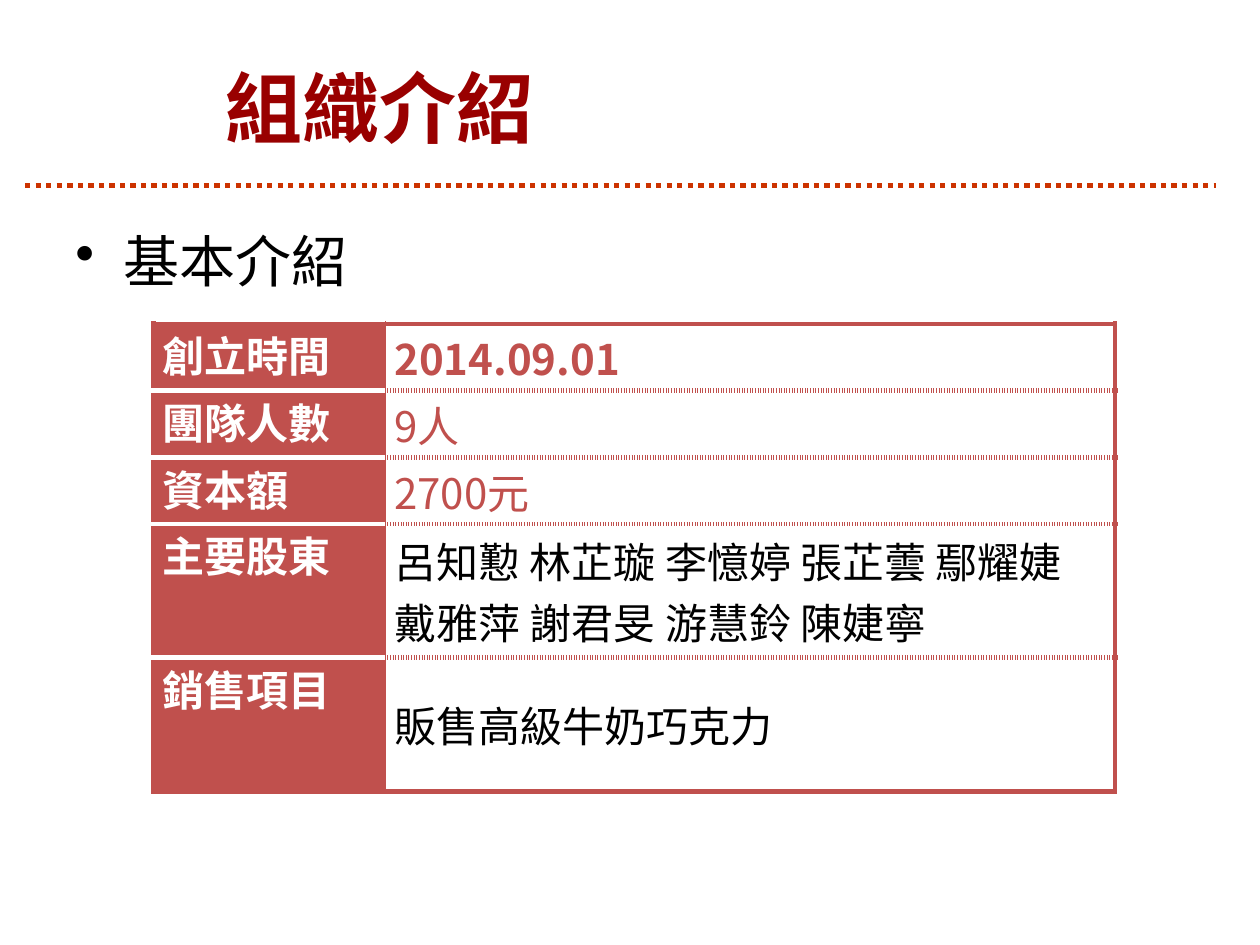
"""Build the organisation slide with its table of basic facts."""
import pptx
import pptx.util
import pptx.dml.color
import pptx.enum.dml
import pptx.enum.shapes
import pptx.enum.text
import pptx.oxml
import pptx.oxml.ns

Inches = pptx.util.Inches
FACE = "Noto Sans CJK SC"
RED, WHITE, BLACK = "C0504D", "FFFFFF", "000000"
qn = pptx.oxml.ns.qn
align = pptx.enum.text.PP_ALIGN
anchor = pptx.enum.text.MSO_ANCHOR


def paint(color, code):
    color.rgb = pptx.dml.color.RGBColor.from_string(code)


def write(para, text, size, code, bold=False, hang=0, bullet=None):
    props = para._p.get_or_add_pPr()
    props.set("marL", str(Inches(hang)))
    props.set("indent", str(Inches(-hang)))
    if bullet:
        props.append(props.makeelement(qn("a:buChar"), {"char": bullet}))
    run = para.add_run()
    run.text = text
    style = {"name": FACE, "size": pptx.util.Pt(size), "bold": bold}
    for key, value in style.items():
        setattr(run.font, key, value)
    paint(run.font.color, code)
    mark = run._r.get_or_add_rPr()
    mark.append(mark.makeelement(qn("a:ea"), {"typeface": FACE}))


deck = pptx.Presentation()
deck.slide_width, deck.slide_height = Inches(10), Inches(7.5)
slide = deck.slides.add_slide(deck.slide_layouts[6])
shapes = slide.shapes

rule = shapes.add_connector(
    pptx.enum.shapes.MSO_CONNECTOR.STRAIGHT,
    Inches(0.2), Inches(1.47), Inches(9.65), Inches(1.47))
rule.line.width = pptx.util.Pt(3)
rule.line.dash_style = pptx.enum.dml.MSO_LINE.ROUND_DOT
paint(rule.line.color, "CC3300")
props = rule._element.spPr
props.append(props.makeelement(qn("a:effectLst"), {}))

texts = [
    ((1.69, 0.22, 7.65, 1.25), anchor.MIDDLE,
     {"text": "組織介紹", "size": 44, "code": "990000", "bold": True}),
    ((0.5, 1.75, 9, 4.95), anchor.TOP,
     {"text": "基本介紹", "size": 32, "code": BLACK, "hang": 0.38, "bullet": "•"}),
]
for place, side, style in texts:
    frame = shapes.add_textbox(*map(Inches, place)).text_frame
    for key, value in {"word_wrap": True, "vertical_anchor": side}.items():
        setattr(frame, key, value)
    write(frame.paragraphs[0], **style)

facts = [
    ("創立時間", ["2014.09.01"], RED, 0.53),
    ("團隊人數", ["9人"], RED, 0.53),
    ("資本額", ["2700元"], RED, 0.53),
    ("主要股東", ["呂知懃 林芷璇 李憶婷 張芷蕓 鄢耀婕",
              "戴雅萍 謝君旻 游慧鈴 陳婕寧"], BLACK, 1.06),
    ("銷售項目", ["販售高級牛奶巧克力"], BLACK, 1.06),
]
last = len(facts) - 1
table = shapes.add_table(len(facts), 2, Inches(1.22), Inches(2.57),
                         Inches(7.63), Inches(3.71)).table
for key in ("first_row", "horz_banding"):
    setattr(table, key, False)
for col, width in zip(table.columns, (1.84, 5.79)):
    col.width = Inches(width)

for row, (label, lines, code, height) in enumerate(facts):
    table.rows[row].height = Inches(height)
    for col, words in enumerate(([label], lines)):
        cell = table.cell(row, col)
        form = {"margin_left": Inches(0.07), "margin_right": Inches(0.07),
                "margin_top": 0, "margin_bottom": 0,
                "vertical_anchor": anchor.MIDDLE if col else anchor.TOP}
        for key, value in form.items():
            setattr(cell, key, value)
        for step, line in enumerate(words):
            frame = cell.text_frame
            para = frame.add_paragraph() if step else frame.paragraphs[0]
            if row == 0 or (col and row < 3):
                para.alignment = align.JUSTIFY
            write(para, line, 24, code if col else WHITE,
                  bold=col == 0 or row == 0, hang=0.33 if len(words) == 1 else 0)
        if col:
            cell.fill.background()
        else:
            cell.fill.solid()
            paint(cell.fill.fore_color, RED)
        solid = (RED, 3, "solid")
        thin = (RED, 1, "solid")
        inner = (RED, 3, "sysDot") if col else (WHITE, 3, "solid")
        edges = {"L": thin if col else solid, "R": solid if col else thin,
                 "T": inner if row else solid,
                 "B": inner if row < last else solid}
        for spot, (side, (tint, width, dash)) in enumerate(edges.items()):
            cell._tc.get_or_add_tcPr().insert(spot, pptx.oxml.parse_xml(
                f'<a:ln{side} {pptx.oxml.ns.nsdecls("a")} w="{pptx.util.Pt(width)}">'
                f'<a:solidFill><a:srgbClr val="{tint}"/></a:solidFill>'
                f'<a:prstDash val="{dash}"/></a:ln{side}>'))

deck.save("out.pptx")
